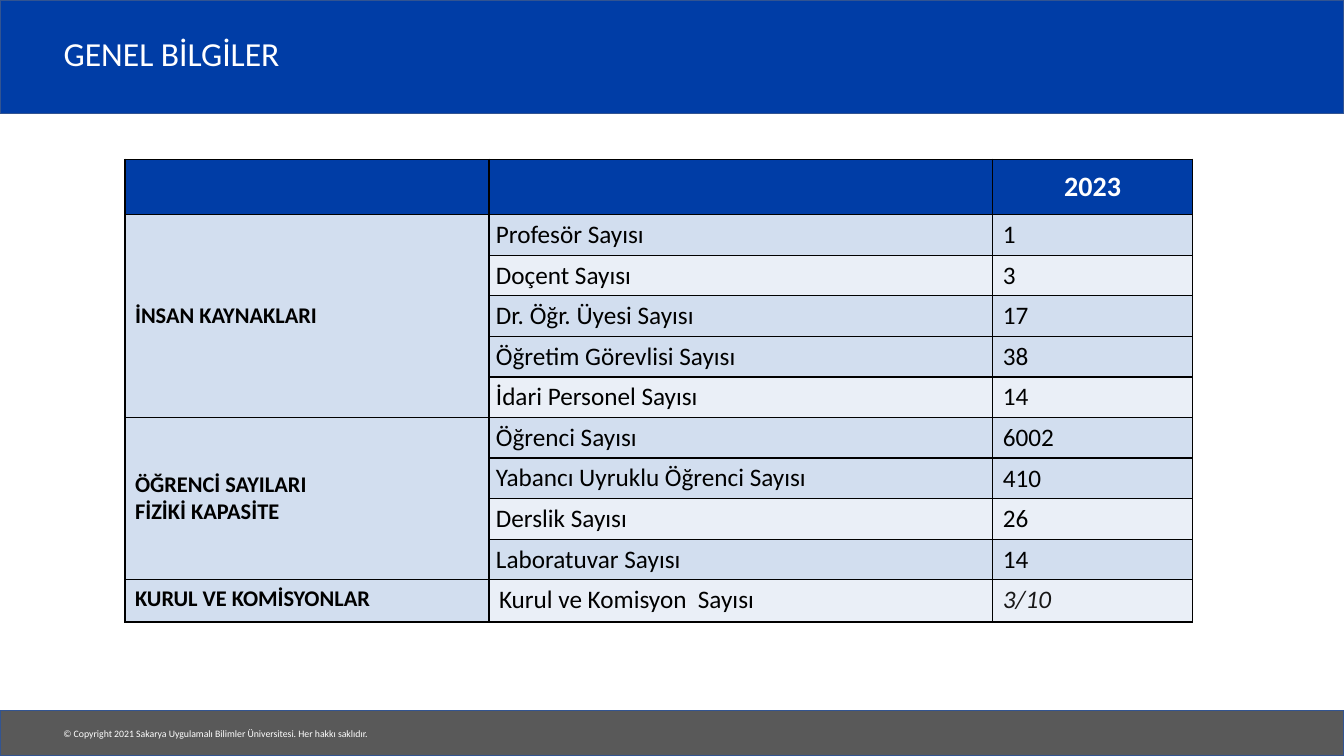
from lxml.etree import SubElement
from pptx import Presentation
from pptx.dml.color import RGBColor
from pptx.enum.shapes import MSO_SHAPE
from pptx.enum.text import MSO_ANCHOR, PP_ALIGN
from pptx.oxml.ns import qn
from pptx.util import Inches, Pt

WIDE, HIGH = Inches(13.33), Inches(7.5)
BLUE = RGBColor(0x00, 0x3D, 0xA6)
EDGE = RGBColor(0x32, 0x54, 0x91)
GREY = RGBColor(0x59, 0x59, 0x59)
DARK = RGBColor(0xD2, 0xDE, 0xEF)
PALE = RGBColor(0xEA, 0xEF, 0xF7)
WHITE = RGBColor(0xFF, 0xFF, 0xFF)
BLACK = RGBColor(0x00, 0x00, 0x00)
INK = RGBColor(0x18, 0x17, 0x17)

HEAD = {"size": Pt(20), "bold": True, "color": WHITE}
GROUP = {"size": Pt(16), "bold": True, "color": BLACK}
BODY = {"size": Pt(18), "bold": False, "color": BLACK}
NOTE = {"size": Pt(18), "bold": False, "italic": True, "color": INK}
MID = {"vertical_anchor": MSO_ANCHOR.MIDDLE}
TIGHT = {**MID, "margin_left": Inches(0.07), "margin_right": Inches(0.07),
         "margin_top": 0, "margin_bottom": 0}

COLS = [27.08, 37.5, 14.85]
ROWS = [7.33] + [5.37] * 9 + [5.6]
LIGHT = {2, 5, 8, 10}
GROUPS = [
    ("İNSAN KAYNAKLARI", [
        ("Profesör Sayısı", "1"),
        ("Doçent Sayısı", "3"),
        ("Dr. Öğr. Üyesi Sayısı", "17"),
        ("Öğretim Görevlisi Sayısı", "38"),
        ("İdari Personel Sayısı", "14")]),
    ("ÖĞRENCİ SAYILARI\vFİZİKİ KAPASİTE", [
        ("Öğrenci Sayısı", "6002"),
        ("Yabancı Uyruklu Öğrenci Sayısı", "410"),
        ("Derslik Sayısı", "26"),
        ("Laboratuvar Sayısı", "14")]),
]


def col(n):
    """Return the width of n hundredths of the slide."""
    return round(WIDE * n / 100)


def row(n):
    """Return the height of n hundredths of the slide."""
    return round(HIGH * n / 100)


def area(x, y, w, h):
    """Return a box in slide units from grid units."""
    return col(x), row(y), col(w), row(h)


def style(item, form):
    """Set each attribute named in a dict."""
    for name, value in form.items():
        setattr(item, name, value)


def write(frame, text, form, align=PP_ALIGN.LEFT):
    """Put formatted text in a frame."""
    frame.text = text
    para = frame.paragraphs[0]
    para.alignment = align
    for run in para.runs:
        style(run.font, {k: v for k, v in form.items() if k != "color"})
        run.font.name = "Calibri"
        run.font.color.rgb = form["color"]
    return para


def band(slide, y, h, fill):
    """Draw a bar across the slide."""
    bar = slide.shapes.add_shape(MSO_SHAPE.RECTANGLE, *area(0, y, 100, h))
    bar.shadow.inherit = False
    bar.fill.solid()
    bar.fill.fore_color.rgb = fill
    bar.line.color.rgb = EDGE
    bar.line.width = Pt(1)


def title(slide, text):
    """Place the title in front of its band."""
    head = slide.shapes.title
    slide.shapes._spTree.append(head._element)
    spots = ("left", "top", "width", "height")
    style(head, dict(zip(spots, area(3.98, 2.53, 82.75, 9.73))))
    style(head.text_frame, {**MID, "word_wrap": True})
    para = write(head.text_frame, text, {"size": Pt(24), "color": WHITE})
    para.line_spacing = 0.9


def foot(slide, text):
    """Write the copyright line."""
    box = slide.shapes.add_textbox(*area(3.98, 95.6, 24.68, 2.93))
    box.text_frame.word_wrap = False
    write(box.text_frame, text, {"size": Pt(7), "color": WHITE})


def paint(cell, fill):
    """Give a cell thin black borders and a fill."""
    props = cell._tc.get_or_add_tcPr()
    for side in ("lnL", "lnR", "lnT", "lnB"):
        line = SubElement(props, qn("a:" + side), w=str(Pt(1)))
        ink = SubElement(line, qn("a:solidFill"))
        SubElement(ink, qn("a:srgbClr"), val=str(BLACK))
    cell.fill.solid()
    cell.fill.fore_color.rgb = fill


def put(cell, text, form, look=MID, align=PP_ALIGN.LEFT):
    """Fill a cell with formatted text."""
    style(cell, look)
    write(cell.text_frame, text, form, align)


def grid(slide):
    """Build the table of figures."""
    place = area(9.3, 21.07, sum(COLS), sum(ROWS))
    table = slide.shapes.add_table(len(ROWS), len(COLS), *place).table
    style(table, {"first_row": False, "horz_banding": False})
    for part, size in zip(table.columns, COLS):
        part.width = col(size)
    for part, size in zip(table.rows, ROWS):
        part.height = row(size)
    for r in range(len(ROWS)):
        for c in range(len(COLS)):
            pale = r in LIGHT and c > 0
            paint(table.cell(r, c), BLUE if r == 0 else PALE if pale else DARK)
    put(table.cell(0, 2), "2023", HEAD, align=PP_ALIGN.CENTER)
    top = 1
    for name, facts in GROUPS:
        end = top + len(facts)
        table.cell(top, 0).merge(table.cell(end - 1, 0))
        put(table.cell(top, 0), name, GROUP)
        for r, (label, count) in enumerate(facts, top):
            put(table.cell(r, 1), label, BODY, TIGHT, PP_ALIGN.JUSTIFY)
            put(table.cell(r, 2), count, BODY)
        top = end
    put(table.cell(top, 0), "KURUL VE KOMİSYONLAR", GROUP, {})
    put(table.cell(top, 1), "Kurul ve Komisyon  Sayısı", BODY, {},
        PP_ALIGN.JUSTIFY)
    put(table.cell(top, 2), "3/10", NOTE, {})


def main():
    """Build and save the slide."""
    deck = Presentation()
    style(deck, {"slide_width": WIDE, "slide_height": HIGH})
    slide = deck.slides.add_slide(deck.slide_layouts[5])
    band(slide, 0, 15, BLUE)
    band(slide, 94, 6, GREY)
    foot(slide, "© Copyright 2021 Sakarya Uygulamalı Bilimler Üniversitesi. "
                "Her hakkı saklıdır.")
    grid(slide)
    title(slide, "GENEL BİLGİLER")
    deck.save("out.pptx")


if __name__ == "__main__":
    main()
